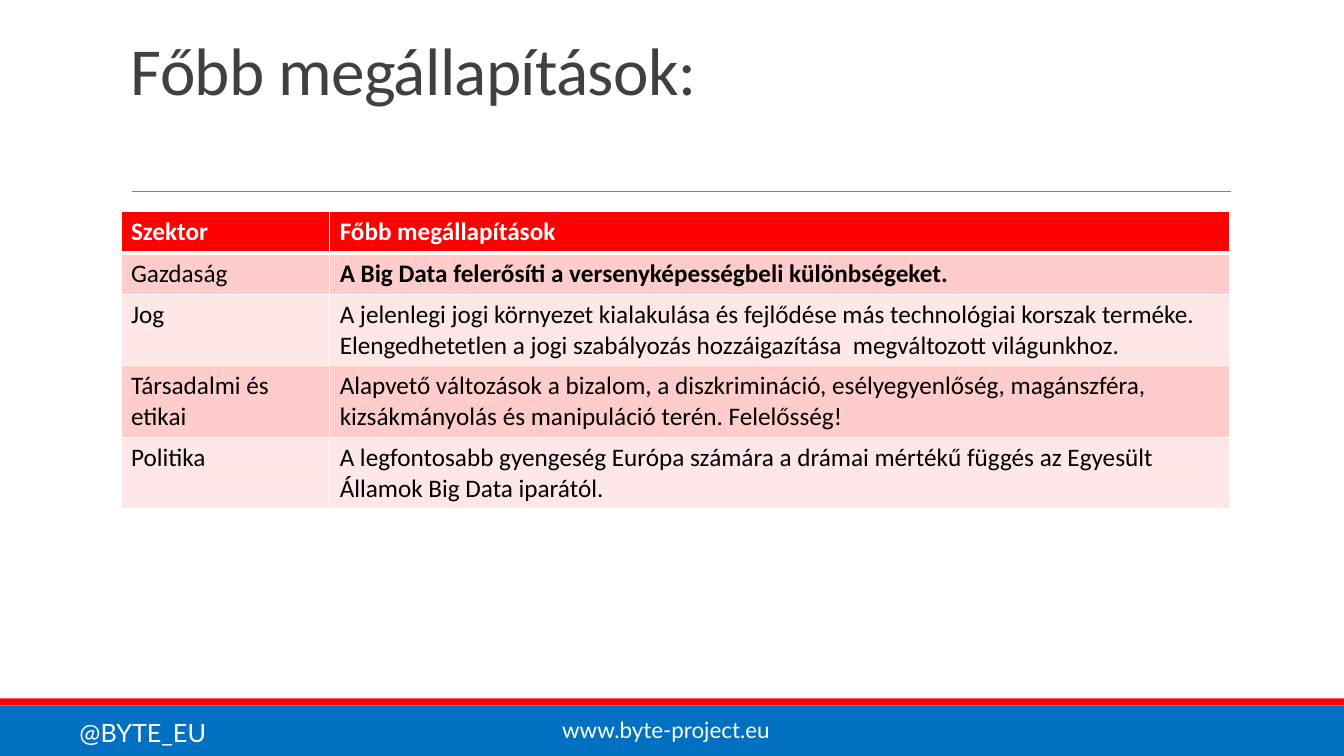
from lxml import etree
from pptx import Presentation
from pptx.dml.color import RGBColor
from pptx.enum import shapes, text
from pptx.oxml.ns import qn
from pptx.util import Inches, Pt

# Content
TITLE = "Főbb megállapítások:"
HEADER = ("Szektor", "Főbb megállapítások")
FINDINGS = [
    ("Gazdaság", ["A Big Data felerősíti a versenyképességbeli különbségeket."]),
    ("Jog", ["A jelenlegi jogi környezet kialakulása és fejlődése más technológiai korszak terméke.",
             "Elengedhetetlen a jogi szabályozás hozzáigazítása  megváltozott világunkhoz."]),
    ("Társadalmi és etikai", ["Alapvető változások a bizalom, a diszkrimináció, esélyegyenlőség, "
                              "magánszféra, kizsákmányolás és manipuláció terén. Felelősség!"]),
    ("Politika", ["A legfontosabb gyengeség Európa számára a drámai mértékű függés az "
                  "Egyesült Államok Big Data iparától."]),
]
HANDLE, WEBSITE = "@BYTE_EU", "www.byte-project.eu"

COLORS = {"blue": "0070C0", "red": "FF0000", "rule": "808080", "title": "404040",
          "white": "FFFFFF", "black": "000000", "dark band": "FFCCCC", "light band": "FFE7E7"}
COLUMN_WIDTHS = (2.07, 8.93)
ROW_HEIGHTS = (0.41, 0.41, 0.71, 0.71, 0.71)


def rgb(name):
    return RGBColor.from_string(COLORS[name])


def write(frame, lines, font, size, color, bold=False):
    frame.word_wrap = True
    frame.text = "\n".join(lines)
    for paragraph in frame.paragraphs:
        paragraph.font.name = font
        paragraph.font.size = Pt(size)
        paragraph.font.bold = bold
        paragraph.font.color.rgb = rgb(color)


def add_text(slide, box, line, font, size, color):
    frame = slide.shapes.add_textbox(*map(Inches, box)).text_frame
    write(frame, [line], font, size, color)
    return frame


def add_band(slide, top, height, color):
    band = slide.shapes.add_shape(shapes.MSO_SHAPE.RECTANGLE, 0, Inches(top),
                                  Inches(13.33), Inches(height))
    band.shadow.inherit = False
    band.fill.solid()
    band.fill.fore_color.rgb = rgb(color)
    band.line.fill.background()


def style_cell(cell, fill, bottom_width):
    properties = cell._tc.get_or_add_tcPr()
    for side, width in (("L", 1), ("R", 1), ("T", 1), ("B", bottom_width)):
        border = etree.SubElement(properties, qn(f"a:ln{side}"), w=str(Pt(width)))
        solid = etree.SubElement(border, qn("a:solidFill"))
        etree.SubElement(solid, qn("a:srgbClr"), val=COLORS["white"])
    cell.fill.solid()
    cell.fill.fore_color.rgb = rgb(fill)


def add_findings(slide):
    table = slide.shapes.add_table(len(ROW_HEIGHTS), len(COLUMN_WIDTHS), Inches(1.2), Inches(2.1),
                                   Inches(sum(COLUMN_WIDTHS)), Inches(sum(ROW_HEIGHTS))).table
    for column, width in zip(table.columns, COLUMN_WIDTHS):
        column.width = Inches(width)
    for row, height in zip(table.rows, ROW_HEIGHTS):
        row.height = Inches(height)

    rows = [(HEADER[0], [HEADER[1]])] + FINDINGS
    for r, (sector, findings) in enumerate(rows):
        is_header = r == 0
        fill = "red" if is_header else "dark band" if r % 2 else "light band"
        for c, lines in enumerate(([sector], findings)):
            cell = table.cell(r, c)
            style_cell(cell, fill, 3 if is_header else 1)
            write(cell.text_frame, lines, "Calibri", 18, "white" if is_header else "black",
                  bold=is_header or (r, c) == (1, 1))


def main():
    prs = Presentation()
    prs.slide_width, prs.slide_height = Inches(13.33), Inches(7.5)
    slide = prs.slides.add_slide(prs.slide_layouts[6])

    # Footer bands
    add_band(slide, 7, 0.5, "blue")
    add_band(slide, 6.93, 0.07, "red")

    # Rule under the title
    rule = slide.shapes.add_connector(shapes.MSO_CONNECTOR.STRAIGHT, Inches(1.31), Inches(1.9),
                                      Inches(12.21), Inches(1.9))
    rule.line.color.rgb = rgb("rule")
    rule.line.width = Pt(0.5)
    etree.SubElement(rule._element.spPr, qn("a:effectLst"))

    # Footer text
    add_text(slide, (0.69, 7.07, 2.1, 0.4), HANDLE, "Lato", 18, "white")
    website = add_text(slide, (4.21, 7.06, 4.79, 0.37), WEBSITE, "Lato", 16, "white")
    website.paragraphs[0].alignment = text.PP_ALIGN.CENTER

    # Title
    title = add_text(slide, (1.2, 0.31, 11, 1.59), TITLE, "Calibri", 48, "title")
    title.margin_top = Inches(0.09)
    title.paragraphs[0].line_spacing = 0.85
    title.paragraphs[0].runs[0].font._element.set("spc", "-50")

    # Findings by sector
    add_findings(slide)

    prs.save("out.pptx")


if __name__ == "__main__":
    main()
